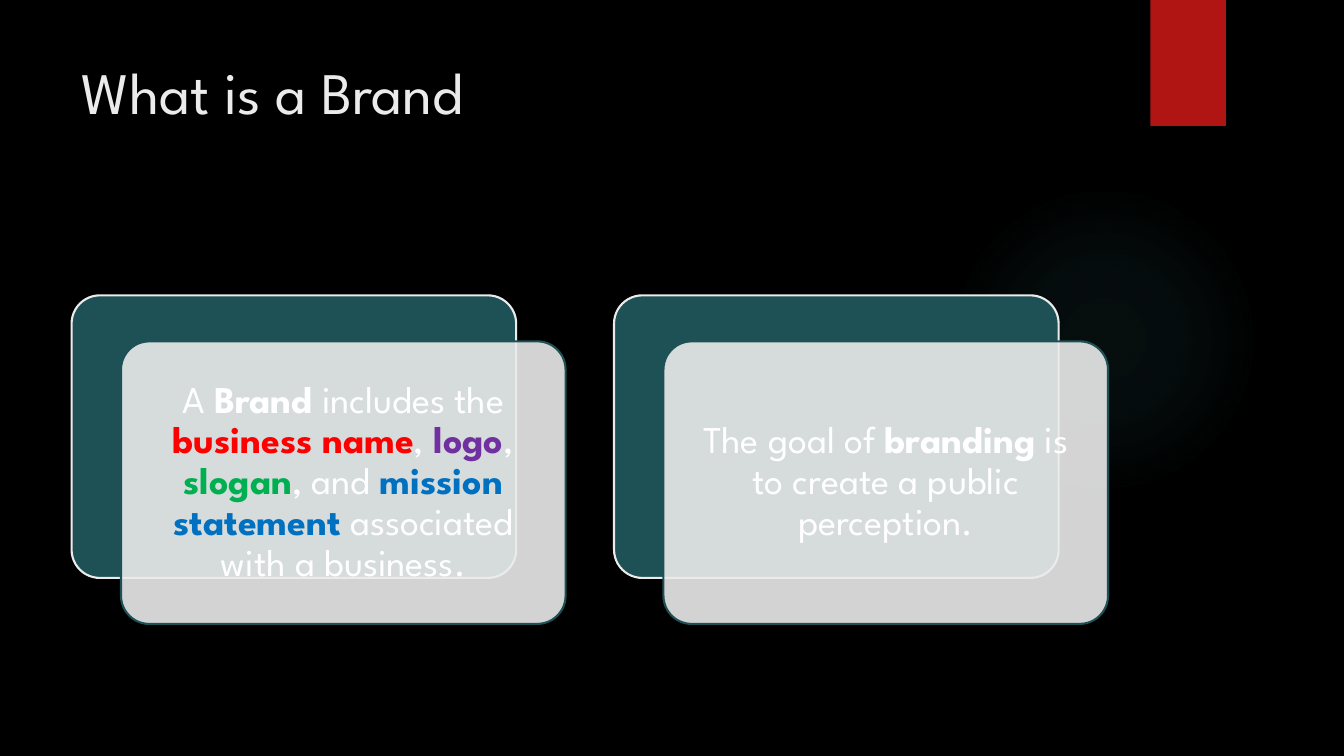
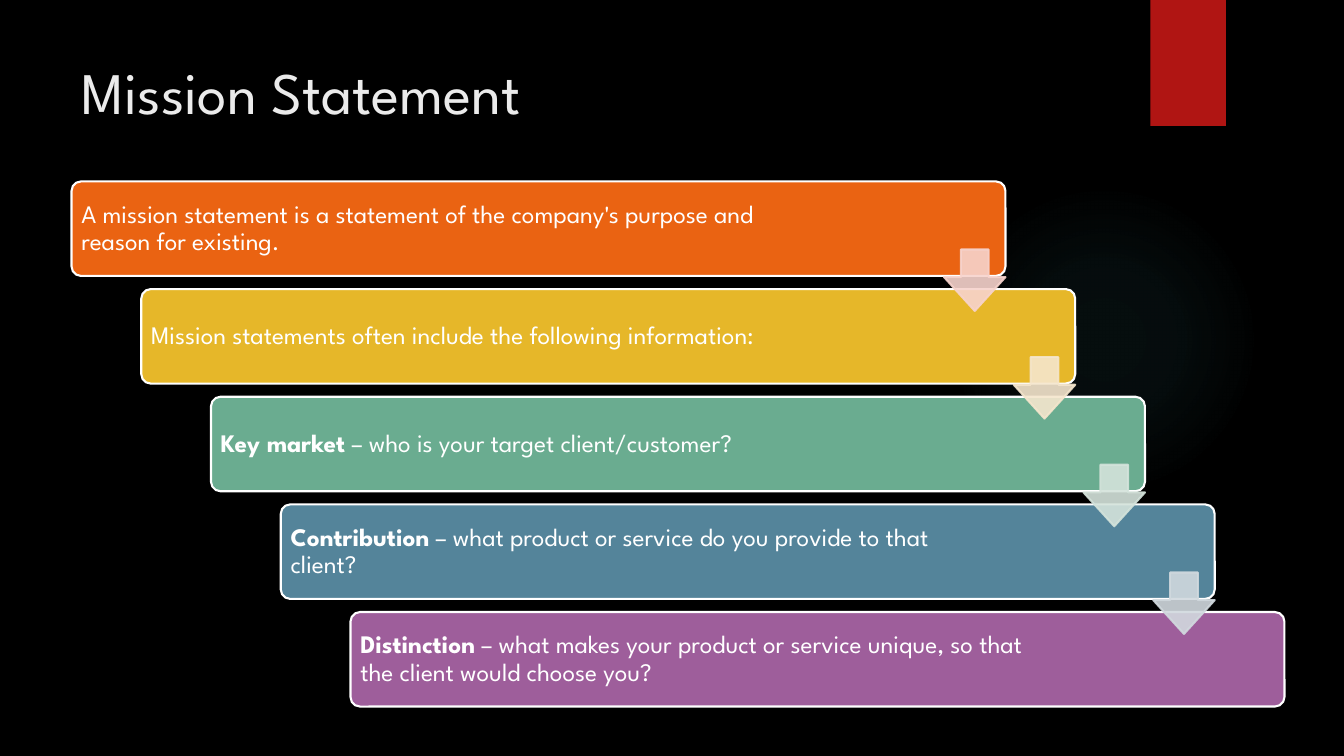
from lxml import etree
from pptx import Presentation
from pptx.dml.color import RGBColor
from pptx.enum.shapes import MSO_SHAPE
from pptx.enum.text import MSO_ANCHOR, PP_ALIGN
from pptx.oxml import parse_xml
from pptx.oxml.ns import nsdecls, qn
from pptx.util import Inches, Pt

RECT = MSO_SHAPE.RECTANGLE
ROUND = MSO_SHAPE.ROUNDED_RECTANGLE
OVAL = MSO_SHAPE.OVAL
DOWN_ARROW = MSO_SHAPE.DOWN_ARROW
TOP, MIDDLE = MSO_ANCHOR.TOP, MSO_ANCHOR.MIDDLE
LEFT, CENTER = PP_ALIGN.LEFT, PP_ALIGN.CENTER

FONT = "League Spartan"
COLORS = {
    "black": "000000", "white": "FFFFFF", "pale": "EBEBEB",
    "tab": "B01513", "glow": "50B9C1", "teal": "1E5155",
    "red": "FF0000", "purple": "7030A0", "green": "00B050", "blue": "0070C0",
    "step1": "EA6312", "step2": "E6B729", "step3": "6AAC90",
    "step4": "54849A", "step5": "9E5E9B",
    "arrow1": "F7D3CC", "arrow2": "F5E6CD", "arrow3": "D4E3DB", "arrow4": "D1D9DE",
}
GLOW_STOPS = [(0, 7), (36, 6), (69, 0)]

TITLE_BOX = (0.71, 0.5, 10.29, 1.53)
TAB_BOX = (11.41, 0, 0.75, 1.25)
GLOW_BOX = (9.41, 1.83, 3.08, 3.08)
CARDS_BOX = (0.71, 2.93, 10.28, 3.26)
STEPS_BOX = (0.71, 1.8, 12.03, 5.21)

CARDS = [
    [("A ",), ("Brand", "white"), (" includes the ",), ("business name", "red"),
     (", ",), ("logo", "purple"), (", ",), ("slogan", "green"), (", and ",),
     ("mission statement", "blue"), (" associated with a business.",)],
    [("The goal of ",), ("branding", "white"),
     (" is to create a public perception.",)],
]
STEPS = [
    [("A mission statement is a statement of the company's purpose and\n"
      "reason for existing.",)],
    [("Mission statements often include the following information:",)],
    [("Key market", "white"), (" – who is your target client/customer?",)],
    [("Contribution", "white"),
     (" – what product or service do you provide to that\nclient?",)],
    [("Distinction", "white"),
     (" – what makes your product or service unique, so that\n"
      "the client would choose you?",)],
]


def rgb(name):
    return RGBColor.from_string(COLORS[name])


def set_alpha(fill_parent, percent):
    clr = fill_parent.find(qn("a:solidFill"))[0]
    etree.SubElement(clr, qn("a:alpha"), val=str(percent * 1000))


def add_shape(slide, kind, box, fill, line=None, adj=(), fill_alpha=100, line_alpha=100):
    sp = slide.shapes.add_shape(kind, *map(Inches, box))
    sp.shadow.inherit = False
    for i, value in enumerate(adj):
        sp.adjustments[i] = value
    sp.fill.solid()
    sp.fill.fore_color.rgb = rgb(fill)
    if fill_alpha < 100:
        set_alpha(sp._element.spPr, fill_alpha)
    if line:
        sp.line.color.rgb = rgb(line)
        sp.line.width = Pt(1.5)
        if line_alpha < 100:
            set_alpha(sp._element.spPr.find(qn("a:ln")), line_alpha)
    else:
        sp.line.fill.background()
    return sp


def write(sp, parts, size, color="white", align=LEFT, anchor=MIDDLE,
          insets=(0.1, 0.05, 0.1, 0.05), spacing=1.0):
    tf = sp.text_frame
    tf.word_wrap = True
    tf.vertical_anchor = anchor
    tf.margin_left, tf.margin_top, tf.margin_right, tf.margin_bottom = map(Inches, insets)
    p = tf.paragraphs[0]
    p.alignment = align
    p.line_spacing = spacing
    for text, *accent in parts:
        for i, piece in enumerate(text.split("\n")):
            if i:
                p.add_line_break()
            r = p.add_run()
            r.text = piece
            r.font.name = FONT
            r.font.size = Pt(size)
            r.font.bold = bool(accent)
            r.font.color.rgb = rgb(accent[0] if accent else color)


def add_glow(slide, box):
    sp = add_shape(slide, OVAL, box, "glow")
    stops = "".join(
        f'<a:gs pos="{pos * 1000}"><a:srgbClr val="{COLORS["glow"]}">'
        f'<a:alpha val="{alpha * 1000}"/></a:srgbClr></a:gs>'
        for pos, alpha in GLOW_STOPS)
    grad = parse_xml(
        f'<a:gradFill {nsdecls("a")}><a:gsLst>{stops}</a:gsLst><a:path path="circle">'
        '<a:fillToRect l="50000" t="50000" r="50000" b="50000"/></a:path></a:gradFill>')
    spPr = sp._element.spPr
    spPr.replace(spPr.find(qn("a:solidFill")), grad)


def add_base_slide(prs, title):
    slide = prs.slides.add_slide(prs.slide_layouts[6])
    slide.background.fill.solid()
    slide.background.fill.fore_color.rgb = rgb("black")
    add_glow(slide, GLOW_BOX)
    add_shape(slide, RECT, TAB_BOX, "tab")
    sp = slide.shapes.add_textbox(*map(Inches, TITLE_BOX))
    write(sp, [(title,)], 42, "pale", anchor=TOP)
    return slide


def add_cards(slide, box, cards):
    left, top, width, height = box
    gap = 0.48
    cell = (width - gap * (len(cards) - 1)) / len(cards)
    w, h = cell * 0.9, height * 0.86
    for i, parts in enumerate(cards):
        x = left + i * (cell + gap)
        add_shape(slide, ROUND, (x, top, w, h), "teal", "pale", [0.1])
        front = add_shape(slide, ROUND, (x + cell - w, top + height - h, w, h),
                          "pale", "teal", [0.1], fill_alpha=90)
        write(front, parts, 27, align=CENTER, insets=(0.11,) * 4, spacing=0.9)


def add_staircase(slide, box, steps):
    left, top, width, height = box
    w, h = width * 0.77, height * 0.18
    dx, dy = (width - w) / (len(steps) - 1), (height - h) / (len(steps) - 1)
    arrow = h * 0.65
    for i, parts in enumerate(steps):
        sp = add_shape(slide, ROUND, (left + i * dx, top + i * dy, w, h),
                       f"step{i + 1}", "white", [0.1])
        write(sp, parts, 18, insets=(0.07, 0.07, 1.3, 0.07), spacing=0.9)
    for i in range(len(steps) - 1):
        color = f"arrow{i + 1}"
        spot = (left + i * dx + w - arrow, top + i * dy + h * 0.72, arrow, arrow)
        add_shape(slide, DOWN_ARROW, spot, color, color, [0.45, 0.55],
                  fill_alpha=90, line_alpha=90)


def main():
    prs = Presentation()
    prs.slide_width, prs.slide_height = Inches(13.33), Inches(7.5)
    add_cards(add_base_slide(prs, "What is a Brand"), CARDS_BOX, CARDS)
    add_staircase(add_base_slide(prs, "Mission Statement"), STEPS_BOX, STEPS)
    prs.save("out.pptx")


if __name__ == "__main__":
    main()
